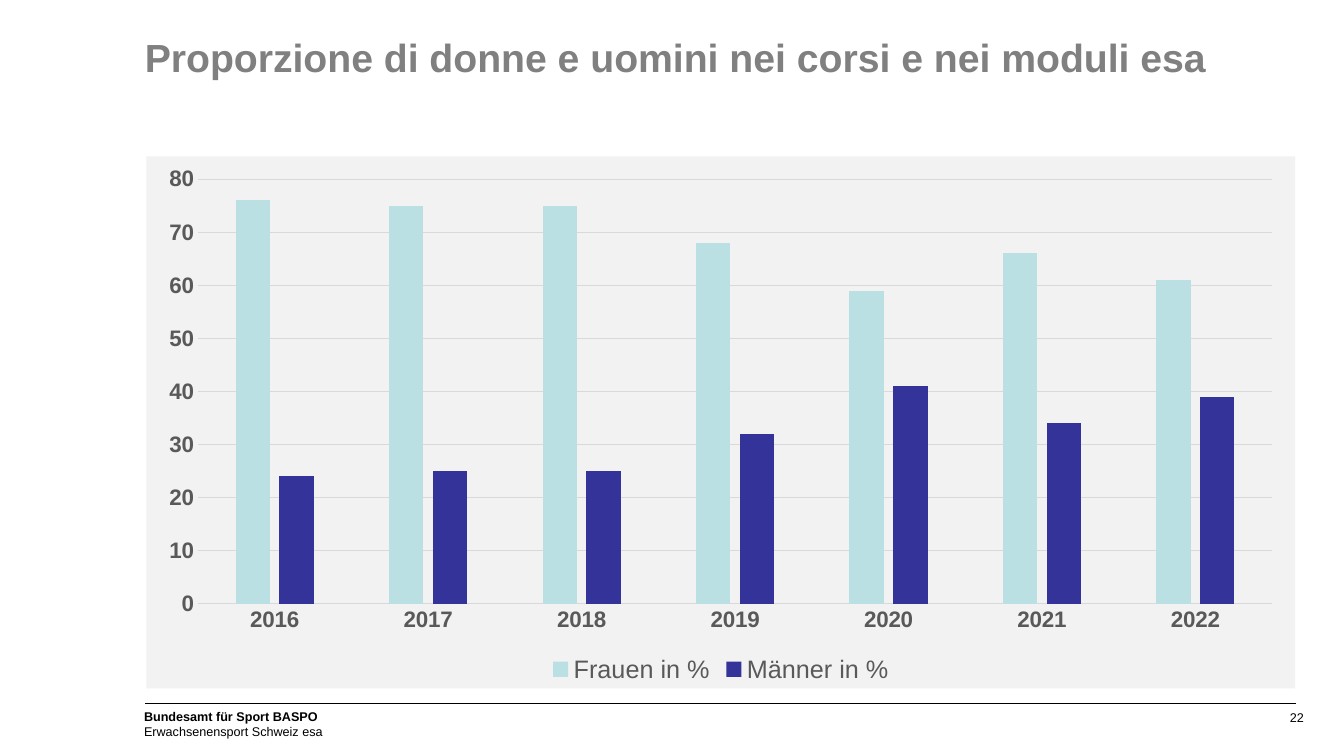
from dataclasses import dataclass

import lxml.etree
import pptx
import pptx.chart.data
import pptx.dml.color
import pptx.enum.chart
import pptx.enum.shapes
import pptx.enum.text
import pptx.oxml
import pptx.oxml.ns
import pptx.util

Cm = pptx.util.Cm
Pt = pptx.util.Pt
ALIGN = pptx.enum.text.PP_ALIGN

FONT = "Arial"
COLORS = {
    "title": "808080",
    "text": "000000",
    "axis": "595959",
    "grid": "D9D9D9",
    "panel": "F2F2F2",
    "women": "BBE0E3",
    "men": "333399",
}
YEARS = [str(year) for year in range(2016, 2023)]


@dataclass
class Series:
    name: str
    values: tuple[int, ...]
    color: str


@dataclass
class Line:
    text: str
    size: float = 9
    bold: bool = False
    color: str = "text"


SERIES = [
    Series("Frauen in %", (76, 75, 75, 68, 59, 66, 61), "women"),
    Series("Männer in %", (24, 25, 25, 32, 41, 34, 39), "men"),
]


def rgb(name: str) -> pptx.dml.color.RGBColor:
    return pptx.dml.color.RGBColor.from_string(COLORS[name])


def set_font(font, size: float, color: str, bold: bool = False) -> None:
    font.name = FONT
    font.size = Pt(size)
    font.bold = bold
    font.color.rgb = rgb(color)


def add_text(s, lines: list[Line], *, left: float, top: float, width: float, height: float,
             inset_x: float = 0, inset_y: float = 0, align=ALIGN.LEFT,
             spacing: float = 1.0, wrap: bool = True) -> None:
    """Place one paragraph per line; lengths are in centimetres."""
    tf = s.shapes.add_textbox(Cm(left), Cm(top), Cm(width), Cm(height)).text_frame
    tf.word_wrap = wrap
    tf.margin_left = tf.margin_right = Cm(inset_x)
    tf.margin_top = tf.margin_bottom = Cm(inset_y)
    for i, line in enumerate(lines):
        p = tf.add_paragraph() if i else tf.paragraphs[0]
        p.alignment = align
        p.line_spacing = spacing
        r = p.add_run()
        r.text = line.text
        set_font(r.font, line.size, line.color, line.bold)


def add_footer_rule(s) -> None:
    rule = s.shapes.add_connector(pptx.enum.shapes.MSO_CONNECTOR.STRAIGHT,
                                  Cm(3.66), Cm(17.73), Cm(32.66), Cm(17.73))
    rule.line.color.rgb = rgb("text")
    rule.line.width = Pt(0.75)
    lxml.etree.SubElement(rule._element.spPr, pptx.oxml.ns.qn("a:effectLst"))


def fill_chart_area(chart, color: str) -> None:
    sp_pr = pptx.oxml.parse_xml(
        f'<c:spPr {pptx.oxml.ns.nsdecls("c", "a")}>'
        f'<a:solidFill><a:srgbClr val="{COLORS[color]}"/></a:solidFill>'
        '<a:ln><a:noFill/></a:ln></c:spPr>')
    chart._chartSpace.find(pptx.oxml.ns.qn("c:txPr")).addprevious(sp_pr)


def style_axis(axis) -> None:
    axis.major_tick_mark = axis.minor_tick_mark = pptx.enum.chart.XL_TICK_MARK.NONE
    set_font(axis.tick_labels.font, 16, "axis", bold=True)


def add_share_chart(s) -> None:
    data = pptx.chart.data.CategoryChartData()
    data.categories = YEARS
    for series in SERIES:
        data.add_series(series.name, series.values)
    chart = s.shapes.add_chart(pptx.enum.chart.XL_CHART_TYPE.COLUMN_CLUSTERED,
                               Cm(3.69), Cm(3.94), Cm(28.95), Cm(13.41), data).chart
    chart.has_title = False
    set_font(chart.font, 10, "text")
    fill_chart_area(chart, "panel")

    chart.has_legend = True
    chart.legend.position = pptx.enum.chart.XL_LEGEND_POSITION.BOTTOM
    chart.legend.include_in_layout = False
    set_font(chart.legend.font, 18, "axis")

    years, shares = chart.category_axis, chart.value_axis
    style_axis(years)
    style_axis(shares)
    shares.minimum_scale, shares.maximum_scale, shares.major_unit = 0, 80, 10
    shares.has_major_gridlines = True
    shares.format.line.fill.background()
    for line in (years.format.line, shares.major_gridlines.format.line):
        line.color.rgb = rgb("grid")
        line.width = Pt(0.75)

    plot = chart.plots[0]
    plot.vary_by_categories = False
    plot.gap_width, plot.overlap = 219, -27
    for bars, series in zip(plot.series, SERIES):
        bars.format.fill.solid()
        bars.format.fill.fore_color.rgb = rgb(series.color)


def main() -> None:
    prs = pptx.Presentation()
    prs.slide_width, prs.slide_height = Cm(33.87), Cm(19.05)
    s = prs.slides.add_slide(prs.slide_layouts[6])

    add_text(s, [Line("22")], left=24.43, top=17.86, width=8.43, height=0.41,
             align=ALIGN.RIGHT, spacing=1.05)
    add_footer_rule(s)
    add_text(s, [Line("Bundesamt für Sport BASPO", bold=True),
                 Line("Erwachsenensport Schweiz esa")],
             left=3.38, top=17.73, width=14.48, height=1.02, inset_x=0.25, inset_y=0.13)
    add_text(s, [Line("Proporzione di donne e uomini nei corsi e nei moduli esa",
                      size=28, bold=True, color="title")],
             left=3.65, top=0.71, width=29, height=2.9, inset_y=0.13)
    add_share_chart(s)

    prs.save("out.pptx")


if __name__ == "__main__":
    main()
